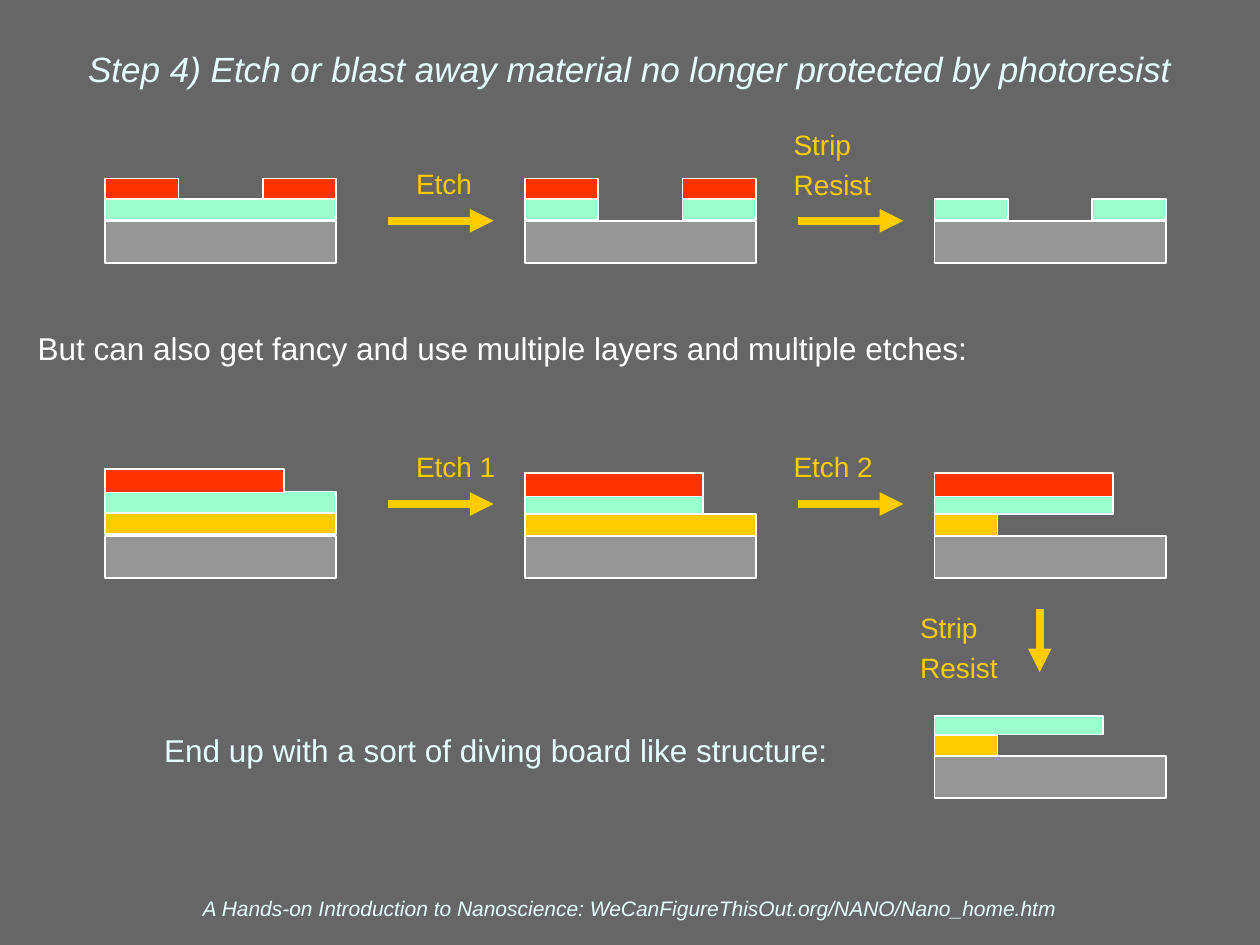
from lxml.etree import SubElement
from pptx import Presentation
from pptx.dml.color import RGBColor
from pptx.enum.shapes import MSO_CONNECTOR, MSO_SHAPE
from pptx.enum.text import MSO_ANCHOR, MSO_AUTO_SIZE, PP_ALIGN
from pptx.oxml.ns import qn
from pptx.util import Cm, Pt

WHITE, PALE, YELLOW = "FFFFFF", "E5FFFF", "FFCC00"
RESIST, OXIDE, SUBSTRATE = "FF3300", "99FFCC", "969696"


def color(value):
    return RGBColor.from_string(value)


def write(shape, lines, size, text_color, align=PP_ALIGN.LEFT, italic=False):
    frame = shape.text_frame
    frame_format = {"word_wrap": True, "auto_size": MSO_AUTO_SIZE.NONE,
                    "vertical_anchor": MSO_ANCHOR.MIDDLE, "margin_left": 0,
                    "margin_right": 0, "margin_top": 0, "margin_bottom": 0}
    for name, value in frame_format.items():
        setattr(frame, name, value)
    for index, line in enumerate(lines):
        paragraph = frame.add_paragraph() if index else frame.paragraphs[0]
        paragraph.text = line
        paragraph.alignment = align
        paragraph.space_before = Pt(4 if index else 0)
        font_format = {"name": "Arial", "size": Pt(size), "italic": italic, "bold": False}
        for name, value in font_format.items():
            setattr(paragraph.font, name, value)
        paragraph.font.color.rgb = color(text_color)


presentation = Presentation()
presentation.slide_width, presentation.slide_height = Cm(25.4), Cm(19.05)
slide = presentation.slides.add_slide(presentation.slide_layouts[5])
slide.background.fill.solid()
slide.background.fill.fore_color.rgb = color("666666")

# Title
title = slide.shapes.title
title_place = {"left": Cm(0.42), "top": Cm(0.21), "width": Cm(24.56), "height": Cm(2.33)}
for name, value in title_place.items():
    setattr(title, name, value)
write(title, ["Step 4) Etch or blast away material no longer protected by photoresist"],
      20, PALE, PP_ALIGN.CENTER, True)

# Statements and step labels: left, vertical middle, width, lines, size, colour
texts = [
    (0.76, 7.01, 23, ["But can also get fancy and use multiple layers and multiple etches:"], 18, WHITE),
    (3.31, 15.11, 15, ["End up with a sort of diving board like structure:"], 18, PALE),
    (8.39, 3.7, 3, ["Etch"], 16, YELLOW),
    (16, 3.31, 3, ["Strip", "Resist"], 16, YELLOW),
    (8.39, 9.41, 3, ["Etch 1"], 16, YELLOW),
    (16, 9.41, 3, ["Etch 2"], 16, YELLOW),
    (18.55, 13.05, 2.2, ["Strip", "Resist"], 16, YELLOW),
]
for left, middle, width, lines, size, text_color in texts:
    height = 0.8 * len(lines)
    box = slide.shapes.add_textbox(Cm(left), Cm(middle - height / 2), Cm(width), Cm(height))
    write(box, lines, size, text_color)

# Wafer cross sections: left edge, then layers as offset, top, width, height, colour
FULL, PAD, BOARD, POST = 4.66, 1.48, 3.6, 1.27
FIRST, SECOND, THIRD = 2.12, 10.58, 18.84
pad_offsets = (0, FULL - PAD)
resist_pads = [(offset, 3.6, PAD, 0.42, RESIST) for offset in pad_offsets]
oxide_pads = [(offset, 4.02, PAD, 0.42, OXIDE) for offset in pad_offsets]
upper_substrate = (0, 4.45, FULL, 0.85, SUBSTRATE)
lower_substrate = (0, 10.8, FULL, 0.85, SUBSTRATE)
etched_board = [(0, 9.98, BOARD, 0.38, OXIDE), (0, 9.53, BOARD, 0.48, RESIST)]
wafers = [
    (FIRST, [(0, 4.02, FULL, 0.42, OXIDE), upper_substrate, *resist_pads]),
    (SECOND, [*oxide_pads, upper_substrate, *resist_pads]),
    (THIRD, [*oxide_pads, upper_substrate]),
    (FIRST, [(0, 9.91, FULL, 0.43, OXIDE), lower_substrate,
             (0, 9.45, BOARD, 0.48, RESIST), (0, 10.34, FULL, 0.43, YELLOW)]),
    (SECOND, [*etched_board, lower_substrate, (0, 10.37, FULL, 0.43, YELLOW)]),
    (THIRD, [*etched_board, lower_substrate, (0, 10.37, POST, 0.43, YELLOW)]),
    (THIRD, [(0, 14.43, 3.39, 0.38, OXIDE), (0, 15.24, FULL, 0.85, SUBSTRATE),
             (0, 14.82, POST, 0.42, YELLOW)]),
]
for left, layers in wafers:
    for offset, top, width, height, fill in layers:
        layer = slide.shapes.add_shape(MSO_SHAPE.RECTANGLE, Cm(left + offset), Cm(top),
                                       Cm(width), Cm(height))
        layer.shadow.inherit = False
        layer.fill.solid()
        layer.fill.fore_color.rgb = color(fill)
        layer.line.color.rgb = color(WHITE)
        layer.line.width = Pt(1)

# Process arrows
arrows = [(left, top, left + 2.12, top) for top in (4.45, 10.16) for left in (7.83, 16.09)]
arrows.append((20.96, 12.28, 20.96, 13.55))
for ends in arrows:
    arrow = slide.shapes.add_connector(MSO_CONNECTOR.STRAIGHT, *[Cm(end) for end in ends])
    arrow.line.color.rgb = color(YELLOW)
    arrow.line.width = Pt(4.5)
    SubElement(arrow.line._get_or_add_ln(), qn("a:tailEnd"), type="triangle")
    SubElement(arrow._element.spPr, qn("a:effectLst"))

# Footer
footer = slide.shapes.add_textbox(Cm(0.85), Cm(17.93), Cm(23.7), Cm(0.74))
write(footer, ["A Hands-on Introduction to Nanoscience: WeCanFigureThisOut.org/NANO/Nano_home.htm"],
      12, PALE, PP_ALIGN.CENTER, True)

presentation.save("out.pptx")
